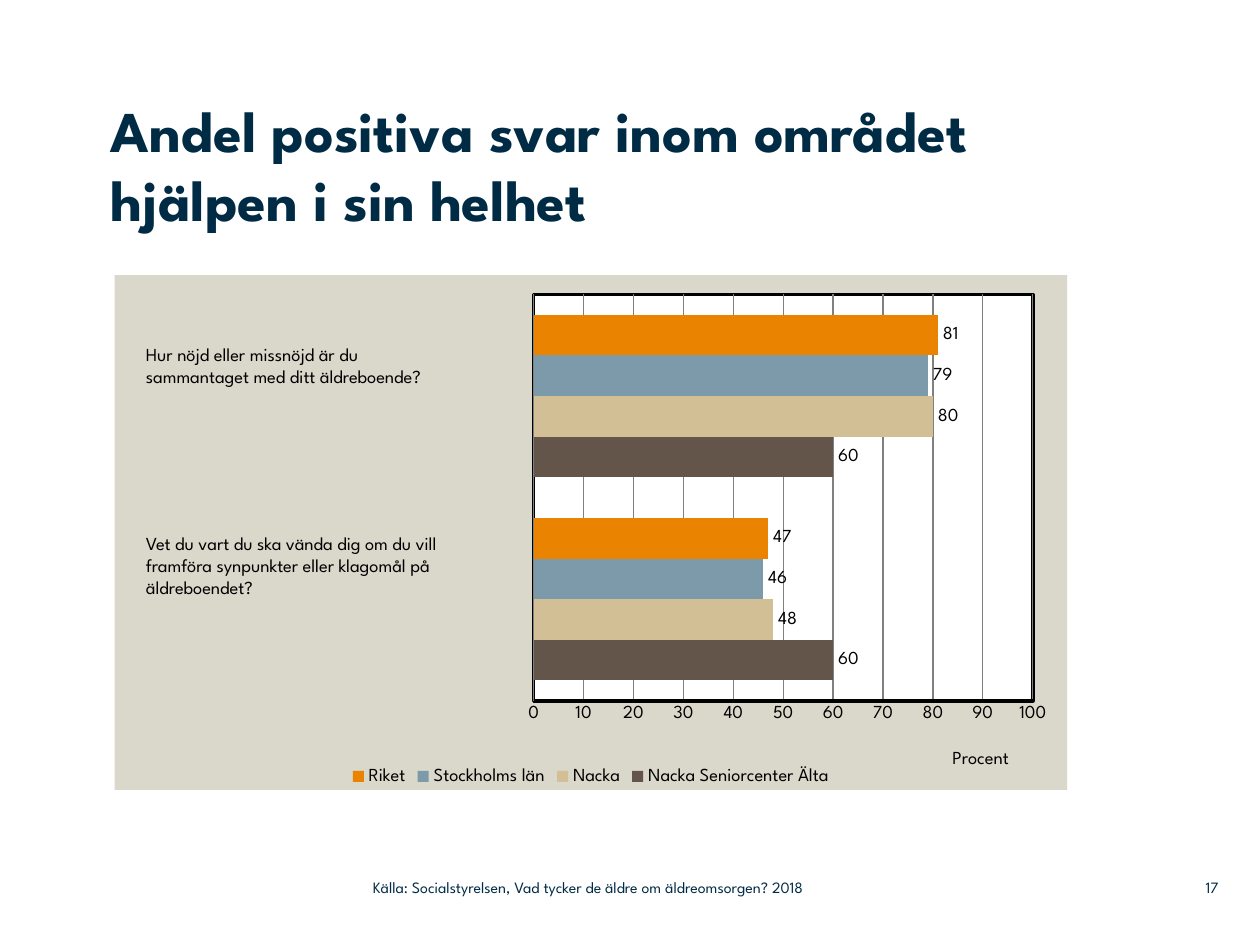
import pptx
import pptx.chart.data
import pptx.dml.color
import pptx.enum.chart
import pptx.enum.text
import pptx.oxml
import pptx.oxml.ns
import pptx.util

WIDE, HIGH = 10, 7.5
FACE = "League Spartan"
NAVY, BLACK, GREY = "002B45", "000000", "808080"
SAND, WHITE = "DAD7CB", "FFFFFF"
SERIES = [
    ("Nacka Seniorcenter Älta", (60, 60), "635549"),
    ("Nacka", (48, 80), "D3BF96"),
    ("Stockholms län", (46, 79), "7D9AAA"),
    ("Riket", (47, 81), "E98300"),
]
ASKS = [
    (0.357, 0.06, "Hur nöjd eller missnöjd är du\nsammantaget med ditt äldreboende?"),
    (0.557, 0.084, "Vet du vart du ska vända dig om du vill framföra synpunkter "
                   "eller klagomål på äldreboendet?"),
]
FOOT = [
    (0.296, 0.443, "Källa: Socialstyrelsen, Vad tycker de äldre om äldreomsorgen? 2018", "LEFT"),
    (0.92, 0.047, "17", "RIGHT"),
]


def tint(code):
    return pptx.dml.color.RGBColor.from_string(code)


def area(left, top, wide, high):
    return [pptx.util.Inches(share * side) for share, side in
            zip((left, top, wide, high), (WIDE, HIGH, WIDE, HIGH))]


def style(font, size, code, bold=False):
    font.name, font.size, font.bold = FACE, pptx.util.Pt(size), bold
    font.color.rgb = tint(code)


def flush(frame):
    frame.margin_left = frame.margin_right = 0
    frame.margin_top = frame.margin_bottom = 0


def write(frame, text, size, code, bold=False, align="LEFT"):
    frame.word_wrap = True
    frame.text = text
    for para in frame.paragraphs:
        para.alignment = getattr(pptx.enum.text.PP_ALIGN, align)
        for run in para.runs:
            style(run.font, size, code, bold)


def add_title(slide, text):
    title = slide.shapes.title
    title.left, title.top, title.width, title.height = area(0.088, 0.1, 0.76, 0.189)
    frame = title.text_frame
    flush(frame)
    frame.vertical_anchor = pptx.enum.text.MSO_ANCHOR.TOP
    write(frame, text, 33, NAVY, True)


def add_note(slide, box, text, size, code):
    note = slide.shapes.add_textbox(*area(*box))
    write(note.text_frame, text, size, code)
    return note.text_frame


def add_foot(slide, left, wide, text, align):
    frame = add_note(slide, (left, 0.919, wide, 0.039), text, 9, NAVY)
    flush(frame)
    frame.vertical_anchor = pptx.enum.text.MSO_ANCHOR.MIDDLE
    frame.paragraphs[0].alignment = getattr(pptx.enum.text.PP_ALIGN, align)


def layout(inner, **shares):
    target = '<c:layoutTarget val="inner"/>' if inner else ""
    modes = "".join(f'<c:{key}Mode val="edge"/>' for key in "xy")
    sizes = "".join(f'<c:{key} val="{val}"/>' for key, val in shares.items())
    space = pptx.oxml.ns.nsdecls("c")
    return pptx.oxml.parse_xml(
        f"<c:layout {space}><c:manualLayout>{target}{modes}{sizes}"
        "</c:manualLayout></c:layout>")


def place(node, item):
    for old in node.findall(pptx.oxml.ns.qn("c:layout")):
        node.remove(old)
    text = node.find(pptx.oxml.ns.qn("c:tx"))
    node.insert(0 if text is None else 1, item)


def paint(code, edge=None):
    space = pptx.oxml.ns.nsdecls("c", "a")
    fill = '<a:solidFill><a:srgbClr val="{}"/></a:solidFill>'
    line = f'<a:ln w="25400">{fill.format(edge)}</a:ln>' if edge else "<a:ln><a:noFill/></a:ln>"
    return pptx.oxml.parse_xml(f"<c:spPr {space}>{fill.format(code)}{line}</c:spPr>")


def set_axis(chart):
    chart.category_axis.visible = False
    axis = chart.value_axis
    axis.minimum_scale, axis.maximum_scale, axis.major_unit = 0, 100, 10
    axis.major_tick_mark = pptx.enum.chart.XL_TICK_MARK.NONE
    axis.has_major_gridlines = True
    axis.major_gridlines.format.line.color.rgb = tint(GREY)
    axis.major_gridlines.format.line.width = pptx.util.Pt(0.75)
    axis.format.line.color.rgb = tint(BLACK)
    axis.format.line.width = pptx.util.Pt(2)
    style(axis.tick_labels.font, 10.5, BLACK)
    name = axis.axis_title
    write(name.text_frame, "Procent", 10.5, BLACK)
    place(name._element, layout(False, x=0.876, y=0.915))


def set_bars(chart):
    plot = chart.plots[0]
    plot.gap_width, plot.overlap, plot.vary_by_categories = 100, 0, False
    for bars, (_, _, code) in zip(plot.series, SERIES):
        bars.format.fill.solid()
        bars.format.fill.fore_color.rgb = tint(code)
        tags = bars.data_labels
        tags.show_value = True
        tags.position = pptx.enum.chart.XL_LABEL_POSITION.OUTSIDE_END
        style(tags.font, 10.5, BLACK)


def add_bars(slide, box):
    data = pptx.chart.data.CategoryChartData()
    data.categories = ["1", "2"]
    for name, vals, _ in SERIES:
        data.add_series(name, vals)
    kind = pptx.enum.chart.XL_CHART_TYPE.BAR_CLUSTERED
    chart = slide.shapes.add_chart(kind, *area(*box), data).chart
    style(chart.font, 10.5, BLACK)
    chart.has_title = False
    chart.has_legend = True
    chart.legend.position = pptx.enum.chart.XL_LEGEND_POSITION.BOTTOM
    chart.legend.include_in_layout = False
    style(chart.legend.font, 10.5, BLACK)
    set_axis(chart)
    set_bars(chart)
    root = chart._chartSpace
    root.chart.addnext(paint(SAND))
    place(root.chart.plotArea, layout(True, x=0.44, y=0.038, w=0.524, h=0.789))
    root.chart.plotArea.append(paint(WHITE, BLACK))


def main():
    deck = pptx.Presentation()
    deck.slide_width = pptx.util.Inches(WIDE)
    deck.slide_height = pptx.util.Inches(HIGH)
    slide = deck.slides.add_slide(deck.slide_layouts[5])
    add_title(slide, "Andel positiva svar inom området hjälpen i sin helhet")
    add_bars(slide, (0.091, 0.291, 0.756, 0.545))
    for top, high, text in ASKS:
        add_note(slide, (0.106, top, 0.298, high), text, 10.5, BLACK)
    for left, wide, text, align in FOOT:
        add_foot(slide, left, wide, text, align)
    deck.save("out.pptx")


if __name__ == "__main__":
    main()
